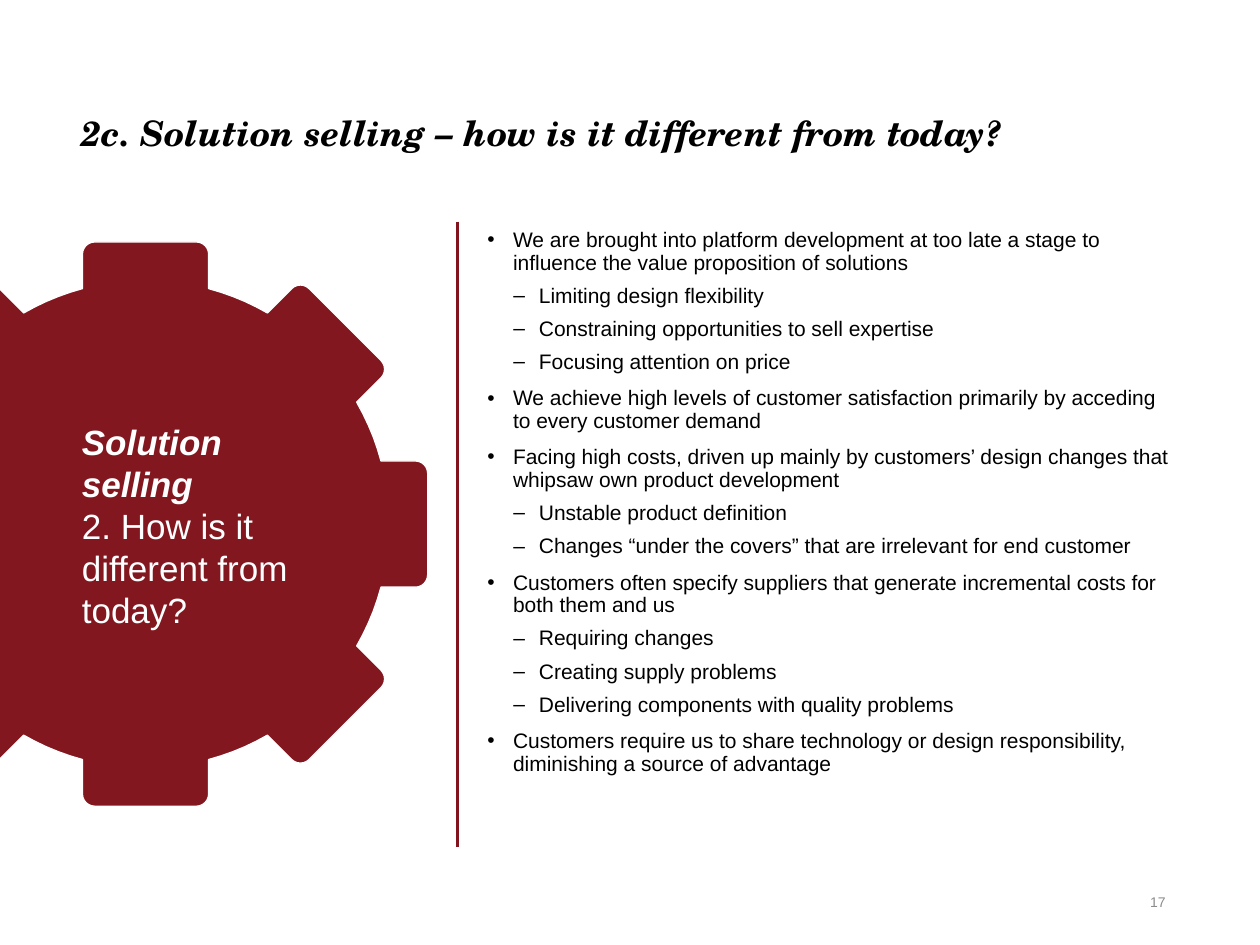
import math
from dataclasses import dataclass

from lxml import etree
from pptx import Presentation
from pptx import util as u
from pptx.dml.color import RGBColor
from pptx.enum import shapes, text
from pptx.oxml.ns import qn

BLACK, WHITE, GRAY = "000000", "FFFFFF", "8C8C8C"
GEAR_RED, RULE_RED = "82171F", "82141E"


@dataclass(frozen=True)
class Level:
    bullet: str
    indent: float
    space_before: float


@dataclass(frozen=True)
class Gear:
    center_x: float
    center_y: float
    body_radius: float
    outer_radius: float
    corner: float
    left_edge: float


POINT = Level("•", 14.6, 7.7)
DETAIL = Level("–", 29.4, 6)
HANGING = 14.6

ARGUMENTS = [
    ("We are brought into platform development at too late a stage to influence the value proposition of solutions",
     ["Limiting design flexibility",
      "Constraining opportunities to sell expertise",
      "Focusing attention on price"]),
    ("We achieve high levels of customer satisfaction primarily by acceding to every customer demand", []),
    ("Facing high costs, driven up mainly by customers’ design changes that whipsaw own product development",
     ["Unstable product definition",
      "Changes “under the covers” that are irrelevant for end customer"]),
    ("Customers often specify suppliers that generate incremental costs for both them and us",
     ["Requiring changes",
      "Creating supply problems",
      "Delivering components with quality problems"]),
    ("Customers require us to share technology or design responsibility, diminishing a source of advantage", []),
]


def color(value: str) -> RGBColor:
    return RGBColor.from_string(value)


def add_box(slide, left, top, width, height, margins=(0, 0, 0, 0), anchor=text.MSO_ANCHOR.TOP):
    frame = slide.shapes.add_textbox(u.Pt(left), u.Pt(top), u.Pt(width), u.Pt(height)).text_frame
    frame.word_wrap = True
    frame.vertical_anchor = anchor
    frame.margin_left, frame.margin_top, frame.margin_right, frame.margin_bottom = map(u.Pt, margins)
    return frame


def write(frame, words: str, *, size: float, ink: str = BLACK, font: str = "Arial",
          emphasis: bool = False, align=text.PP_ALIGN.LEFT, line_spacing=None,
          level: Level | None = None) -> None:
    first = not frame.paragraphs[0].runs
    paragraph = frame.paragraphs[0] if first else frame.add_paragraph()
    paragraph.alignment = align
    if line_spacing is not None:
        paragraph.line_spacing = line_spacing
    if level:
        paragraph.level = 1 if level is DETAIL else 0
        paragraph.space_before = u.Pt(0 if first else level.space_before)
        properties = paragraph._p.get_or_add_pPr()
        properties.set("marL", str(u.Pt(level.indent)))
        properties.set("indent", str(u.Pt(-HANGING)))
        etree.SubElement(properties, qn("a:buFont")).set("typeface", "Arial")
        etree.SubElement(properties, qn("a:buChar")).set("char", level.bullet)
    run = paragraph.add_run()
    run.text = words
    run.font.name = font
    run.font.size = u.Pt(size)
    run.font.bold = run.font.italic = emphasis
    run.font.color.rgb = color(ink)


def polar(radius: float, degrees: float) -> tuple[float, float]:
    angle = math.radians(degrees)
    return radius * math.cos(angle), radius * math.sin(angle)


def tooth_outline(gear: Gear) -> list[tuple[float, float]]:
    base, half_width = polar(gear.body_radius, 15)
    points = [(base, -half_width)]
    for side, start in ((-1, -90), (1, 0)):
        for step in range(0, 91, 15):
            x, y = polar(gear.corner, start + step)
            points.append((gear.outer_radius - gear.corner + x,
                           side * (half_width - gear.corner) + y))
    return points + [polar(gear.body_radius, angle) for angle in range(15, 30, 3)]


def gear_outline(gear: Gear) -> list[tuple[float, float]]:
    points = []
    for turn in range(-135, 136, 45):
        cosine, sine = polar(1, turn)
        for x, y in tooth_outline(gear):
            points.append((gear.center_x + x * cosine - y * sine,
                           gear.center_y + x * sine + y * cosine))
    visible = [point for point in points if point[0] >= gear.left_edge]
    cut = 136
    return ([(gear.left_edge, gear.center_y - cut)] + visible
            + [(gear.left_edge, gear.center_y + cut)])


def add_gear(slide, gear: Gear) -> None:
    start, *rest = [(u.Pt(x), u.Pt(y)) for x, y in gear_outline(gear)]
    builder = slide.shapes.build_freeform(*start, scale=1.0)
    builder.add_line_segments(rest, close=True)
    shape = builder.convert_to_shape()
    shape.shadow.inherit = False
    shape.fill.solid()
    shape.fill.fore_color.rgb = color(GEAR_RED)
    shape.line.color.rgb = color(WHITE)
    shape.line.width = u.Pt(0.75)


def add_rule(slide, x: float, top: float, bottom: float) -> None:
    rule = slide.shapes.add_connector(shapes.MSO_CONNECTOR.STRAIGHT,
                                      u.Pt(x), u.Pt(top), u.Pt(x), u.Pt(bottom))
    rule.line.color.rgb = color(RULE_RED)
    rule.line.width = u.Pt(1.5)
    etree.SubElement(rule._element.spPr, qn("a:effectLst"))


def main() -> None:
    presentation = Presentation()
    presentation.slide_width, presentation.slide_height = u.Pt(720), u.Pt(540)
    slide = presentation.slides.add_slide(presentation.slide_layouts[6])

    body = add_box(slide, 270, 125.3, 403.2, 354.2, margins=(8.6, 5.8, 2.9, 0))
    for point, details in ARGUMENTS:
        write(body, point, size=12, line_spacing=0.9, level=POINT)
        for detail in details:
            write(body, detail, size=12, line_spacing=0.9, level=DETAIL)

    title = add_box(slide, 46.8, 64.8, 626.4, 23)
    write(title, "2c. Solution selling – how is it different from today?", size=20,
          font="TeX Gyre Schola", emphasis=True, line_spacing=u.Pt(23))

    add_gear(slide, Gear(83.2, 299.5, 139.3, 161.2, 7, -2.9))
    label = add_box(slide, 46.8, 239.8, 120.2, 121, anchor=text.MSO_ANCHOR.MIDDLE)
    write(label, "Solution selling", size=20, ink=WHITE, emphasis=True)
    write(label, "2. How is it different from today?", size=20, ink=WHITE)

    add_rule(slide, 261.5, 126.7, 483.8)

    number = add_box(slide, 630.7, 504, 42.5, 22.3, margins=(7.2, 3.6, 7.2, 3.6),
                     anchor=text.MSO_ANCHOR.MIDDLE)
    write(number, "17", size=8, ink=GRAY, align=text.PP_ALIGN.RIGHT)
    presentation.save("out.pptx")


if __name__ == "__main__":
    main()
